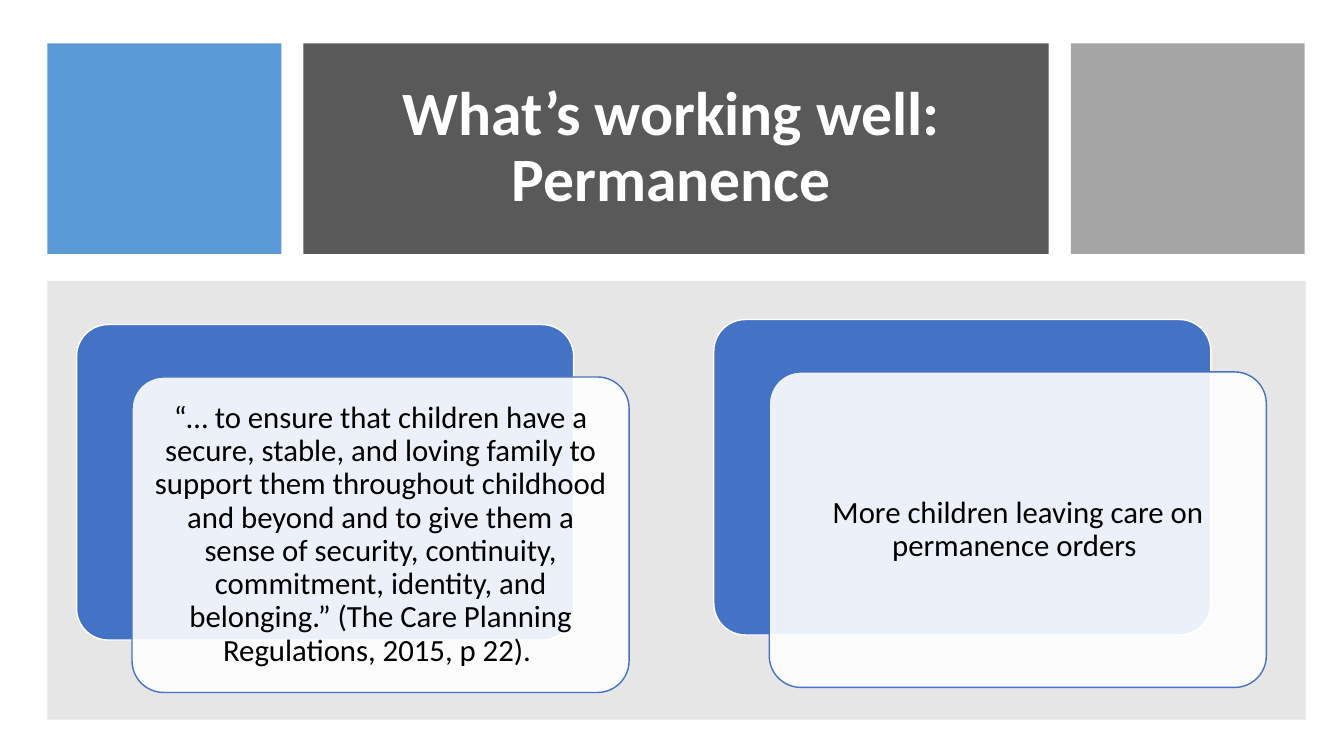
from lxml.etree import SubElement
from pptx import Presentation
from pptx.dml.color import RGBColor
from pptx.enum.shapes import MSO_SHAPE as Shape
from pptx.enum.text import MSO_ANCHOR as Anchor, PP_ALIGN as Align
from pptx.oxml.ns import qn
from pptx.util import Inches, Pt

COLORS = {
    "white": "FFFFFF", "black": "000000", "title": "595959", "accent": "5B9BD5",
    "gray": "A5A5A5", "panel": "E7E6E6", "card": "4472C4",
}
SLIDE_W, SLIDE_H = 13.33, 7.5
LEFT, TOP, GAP = 0.47, 0.43, 0.22
BAND_H, SIDE_W, TITLE_W = 2.09, 2.32, 7.39
PANEL_TOP, PANEL_W, PANEL_H = 2.79, 12.48, 4.35
CARD_W, CARD_H, CARD_PITCH = 4.93, 3.13, 6.32
SHIFT_X, SHIFT_Y, TEXT_PAD = 0.55, 0.52, 0.09
CARDS = [
    (3.22, "“… to ensure that children have a secure, stable, and loving family to "
           "support them throughout childhood and beyond and to give them a sense of "
           "security, continuity, commitment, identity, and belonging.” (The Care "
           "Planning Regulations, 2015, p 22). "),
    (3.17, "More children leaving care on permanence orders "),
]


def rgb(name):
    """Return the named palette colour."""
    return RGBColor.from_string(COLORS[name])


def add_block(slide, box, fill, outline=None, rounded=False, opacity=None):
    """Add a filled rectangle, optionally rounded, outlined or translucent."""
    kind = Shape.ROUNDED_RECTANGLE if rounded else Shape.RECTANGLE
    block = slide.shapes.add_shape(kind, *map(Inches, box))
    block.shadow.inherit = False
    block.fill.solid()
    block.fill.fore_color.rgb = rgb(fill)
    if rounded:
        block.adjustments[0] = 0.1
    if outline:
        block.line.color.rgb = rgb(outline)
        block.line.width = Pt(1)
    else:
        block.line.fill.background()
    if opacity:
        color = block.fill._xPr.find(".//" + qn("a:srgbClr"))
        SubElement(color, qn("a:alpha"), val=str(opacity * 1000))


def add_text(slide, box, words, size, color, bold=False, inset=(0.1, 0.05)):
    """Add centred, wrapped text in a box."""
    frame = slide.shapes.add_textbox(*map(Inches, box)).text_frame
    frame.word_wrap = True
    frame.vertical_anchor = Anchor.MIDDLE
    frame.margin_left = frame.margin_right = Inches(inset[0])
    frame.margin_top = frame.margin_bottom = Inches(inset[1])
    paragraph = frame.paragraphs[0]
    paragraph.alignment = Align.CENTER
    paragraph.line_spacing = 0.9
    run = paragraph.add_run()
    run.text = words
    run.font.name = "Calibri"
    run.font.size = Pt(size)
    run.font.bold = bold
    run.font.color.rgb = rgb(color)


def add_header(slide):
    """Add the three header blocks and the title."""
    left = LEFT
    for width, fill in ((SIDE_W, "accent"), (TITLE_W, "title"), (SIDE_W, "gray")):
        add_block(slide, (left, TOP, width, BAND_H), fill)
        left += width + GAP
    add_text(slide, (3.53, 0.75, 6.26, 1.45), "What’s working well: Permanence",
             size=44, color="white", bold=True)


def add_card(slide, left, top, words):
    """Add a blue card with a translucent text card in front of it."""
    add_block(slide, (left, top, CARD_W, CARD_H), "card", outline="white", rounded=True)
    left, top = left + SHIFT_X, top + SHIFT_Y
    add_block(slide, (left, top, CARD_W, CARD_H), "white", outline="card",
              rounded=True, opacity=90)
    text_box = (left + TEXT_PAD, top + TEXT_PAD,
                CARD_W - 2 * TEXT_PAD, CARD_H - 2 * TEXT_PAD)
    add_text(slide, text_box, words, size=22, color="black", inset=(0.09, 0.09))


def main():
    """Build and save the slide."""
    deck = Presentation()
    deck.slide_width, deck.slide_height = Inches(SLIDE_W), Inches(SLIDE_H)
    slide = deck.slides.add_slide(deck.slide_layouts[6])
    add_header(slide)
    add_block(slide, (LEFT, PANEL_TOP, PANEL_W, PANEL_H), "panel")
    for column, (top, words) in enumerate(CARDS):
        add_card(slide, 0.76 + column * CARD_PITCH, top, words)
    deck.save("out.pptx")


if __name__ == "__main__":
    main()
